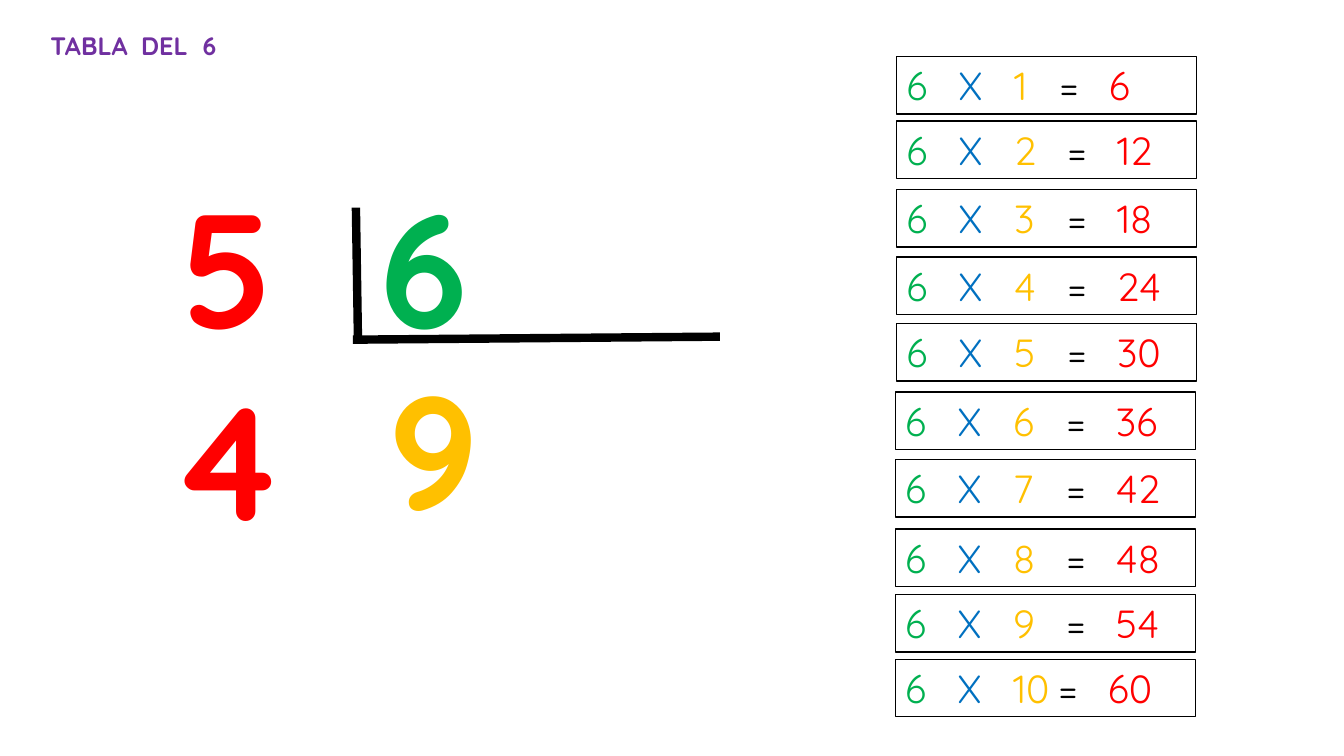
from dataclasses import dataclass

from lxml.etree import SubElement
from pptx import Presentation
from pptx.dml.color import RGBColor
from pptx.enum.shapes import MSO_CONNECTOR as Conn, MSO_SHAPE as Shape
from pptx.enum.text import MSO_ANCHOR as Anchor, MSO_AUTO_SIZE as AutoSize, PP_ALIGN as Align
from pptx.oxml.ns import qn
from pptx.util import Emu, Pt

PX = 9144  # 100 px to the inch
FONT = "Quicksand"
BLACK = RGBColor(0x00, 0x00, 0x00)
WHITE = RGBColor(0xFF, 0xFF, 0xFF)
RED = RGBColor(0xFF, 0x00, 0x00)
GREEN = RGBColor(0x00, 0xB0, 0x50)
BLUE = RGBColor(0x00, 0x70, 0xC0)
GOLD = RGBColor(0xFF, 0xC0, 0x00)
PURPLE = RGBColor(0x70, 0x30, 0xA0)

TABLE_OF = 6
FACT_TOPS = (56, 120, 188, 255, 321, 389, 456, 525, 590, 654)


@dataclass(frozen=True)
class BigNumber:
    text: str
    left: int
    top: int
    width: int
    color: RGBColor


@dataclass(frozen=True)
class Stroke:
    x1: int
    y1: int
    x2: int
    y2: int


BIG_NUMBERS = (
    BigNumber("6", 362, 161, 118, GREEN),
    BigNumber("54", 119, 161, 214, RED),
    BigNumber("9", 371, 343, 118, GOLD),
)
DIVISION_BRACKET = (Stroke(353, 206, 355, 335), Stroke(350, 337, 714, 334))


def px(*lengths: int) -> list[Emu]:
    return [Emu(n * PX) for n in lengths]


def add_run(p, text: str, size: int, color: RGBColor, bold: bool = False) -> None:
    r = p.add_run()
    r.text = text
    for name, value in {"name": FONT, "size": Pt(size), "bold": bold}.items():
        setattr(r.font, name, value)
    r.font.color.rgb = color


def set_tabs(p, stops: tuple[int, ...]) -> None:
    tabs = SubElement(p._p.get_or_add_pPr(), qn("a:tabLst"))
    for stop in stops:
        SubElement(tabs, qn("a:tab"), pos=str(stop * PX), algn="l")


def first_paragraph(s, align: Align):
    """Set up the text frame of a shape and return its paragraph."""
    tf = s.text_frame
    settings = {"word_wrap": True, "auto_size": AutoSize.SHAPE_TO_FIT_TEXT,
                "vertical_anchor": Anchor.TOP}
    for name, value in settings.items():
        setattr(tf, name, value)
    p = tf.paragraphs[0]
    p.alignment = align
    return p


def add_title(slide) -> None:
    s = slide.shapes.title
    s.left, s.top, s.width, s.height = px(40, 25, 263, 40)
    p = first_paragraph(s, Align.LEFT)
    set_tabs(p, (90, 151))
    add_run(p, f"TABLA\tDEL\t{TABLE_OF}", 18, PURPLE, bold=True)


def add_big_number(slide, number: BigNumber) -> None:
    s = slide.shapes.add_textbox(*px(number.left, number.top, number.width, 204))
    p = first_paragraph(s, Align.CENTER)
    add_run(p, number.text, 115, number.color, bold=True)


def add_bracket(slide) -> None:
    group = slide.shapes.add_group_shape()
    for stroke in DIVISION_BRACKET:
        line = group.shapes.add_connector(
            Conn.STRAIGHT, *px(stroke.x1, stroke.y1, stroke.x2, stroke.y2))
        line.line.color.rgb = BLACK
        line.line.width = Pt(6)
        SubElement(line._element.spPr, qn("a:effectLst"))


def add_fact(slide, factor: int, top: int) -> None:
    """Add one boxed row of the multiplication table."""
    left = 889 if factor <= 5 else 888
    s = slide.shapes.add_shape(Shape.RECTANGLE, *px(left, top, 298, 57))
    s.shadow.inherit = False
    s.fill.solid()
    s.fill.fore_color.rgb = WHITE
    s.line.color.rgb = BLACK
    s.line.width = Pt(1)
    p = first_paragraph(s, Align.LEFT)
    shift = 8 if factor in (1, 10) else 0
    set_tabs(p, (52, 107, 160 - shift, 209 - shift))
    parts = ((f"{TABLE_OF}\t", GREEN), ("X\t", BLUE), (str(factor), GOLD),
             ("\t=\t", BLACK), (str(TABLE_OF * factor), RED))
    for text, color in parts:
        add_run(p, text, 28, color)


def main() -> None:
    prs = Presentation()
    prs.slide_width, prs.slide_height = px(1333, 750)
    slide = prs.slides.add_slide(prs.slide_layouts.get_by_name("Title Only"))
    add_title(slide)
    add_bracket(slide)
    for factor, top in enumerate(FACT_TOPS, start=1):
        add_fact(slide, factor, top)
    for number in BIG_NUMBERS:
        add_big_number(slide, number)
    prs.save("out.pptx")


if __name__ == "__main__":
    main()
